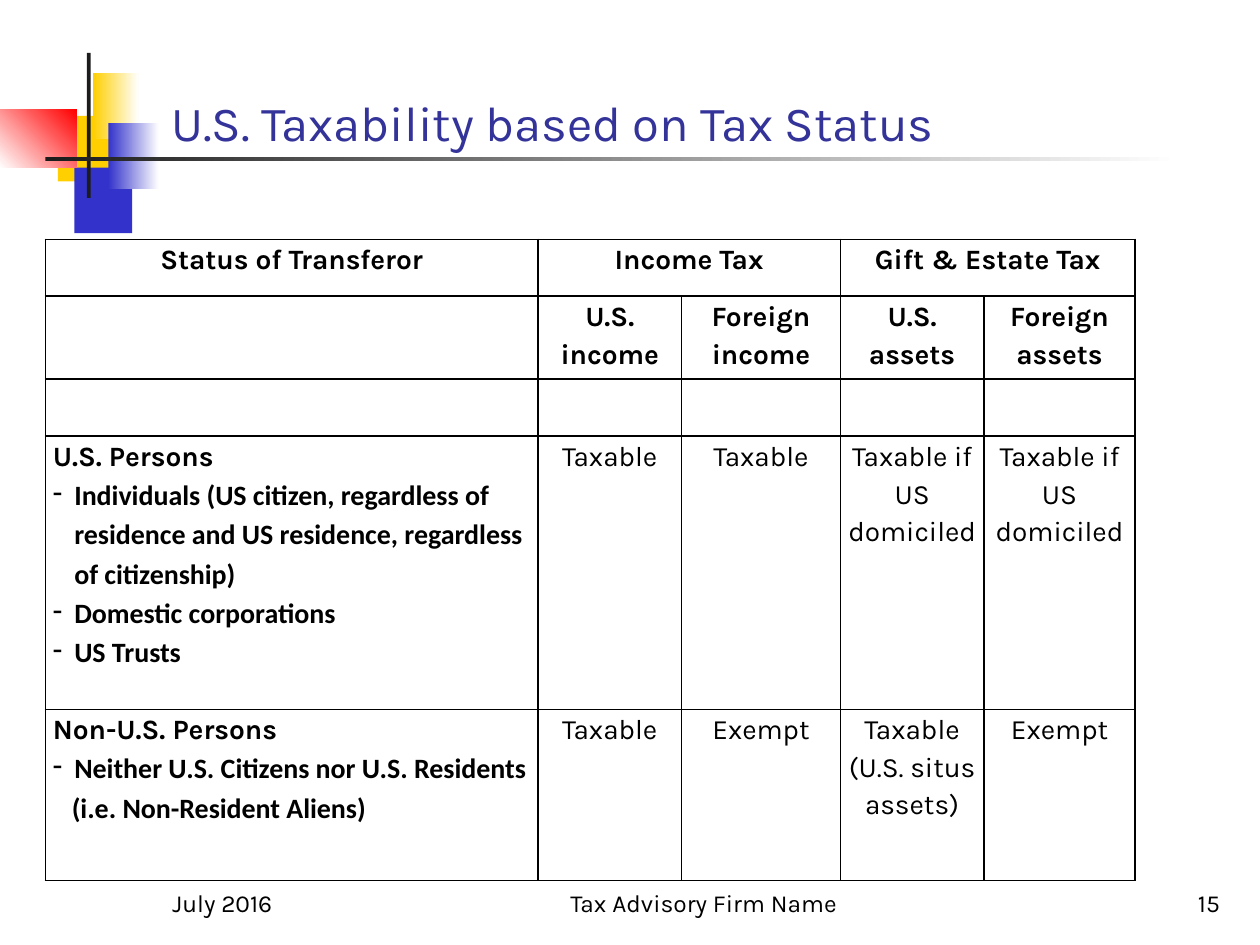
from typing import NamedTuple

from lxml import etree
from pptx import Presentation
from pptx.dml.color import RGBColor
from pptx.enum import shapes, text
from pptx.oxml import ns
from pptx.util import Inches, Pt

BLACK = RGBColor(0x00, 0x00, 0x00)
WHITE = RGBColor(0xFF, 0xFF, 0xFF)
YELLOW = RGBColor(0xFF, 0xCF, 0x01)
BLUE = RGBColor(0x33, 0x33, 0xCC)
RED = RGBColor(0xFF, 0x00, 0x00)
CHARCOAL = RGBColor(0x1C, 0x1C, 0x1C)
TITLE_BLUE = RGBColor(0x33, 0x33, 0x99)

LEFT, CENTER, RIGHT = text.PP_ALIGN.LEFT, text.PP_ALIGN.CENTER, text.PP_ALIGN.RIGHT


class Block(NamedTuple):
    box: tuple[float, float, float, float]
    colors: tuple[RGBColor, ...]
    angle: float = 0


class Label(NamedTuple):
    words: str
    box: tuple[float, float, float, float]
    align: text.PP_ALIGN = LEFT
    size: float = 14
    color: RGBColor = BLACK


class Line(NamedTuple):
    words: str
    align: text.PP_ALIGN = CENTER
    bold: bool = False
    font: str = "Karla"
    indent: float = 0
    bullet: bool = False


BLOCKS = [
    Block((0.46, 0.92, 0.48, 0.52), (YELLOW,)),
    Block((0.59, 1.33, 0.46, 0.52), (BLUE,)),
    Block((0.74, 0.58, 0.36, 0.52), (YELLOW, WHITE)),
    Block((0.86, 0.98, 0.4, 0.52), (BLUE, WHITE)),
    Block((0, 0.87, 0.61, 0.46), (WHITE, RED), 45),
    Block((0.69, 0.42, 0.03, 1.15), (CHARCOAL,)),
    Block((0.36, 1.25, 9, 0.03), (CHARCOAL, WHITE)),
]
LABELS = [
    Label("U.S. Taxability based on Tax Status", (1.26, 0.23, 8.52, 1.02), LEFT, 28, TITLE_BLUE),
    Label("July 2016", (1.27, 6.83, 2.08, 0.5)),
    Label("Tax Advisory Firm Name", (4, 6.83, 3.17, 0.5), CENTER),
    Label("15", (7.7, 6.83, 2.08, 0.5), RIGHT),
]


def head(words: str) -> list[Line]:
    return [Line(words, bold=True)]


def group(words: str) -> Line:
    return Line(words, LEFT, True)


def member(words: str, indent: float = 0.17, bullet: bool = True) -> Line:
    return Line(words, LEFT, True, "Calibri", indent, bullet)


def values(*words: str) -> list[list[Line]]:
    return [[Line(w)] for w in words]


COLUMNS = [3.91, 1.14, 1.26, 1.14, 1.2]
ROWS = [0.45, 0.66, 0.45, 2.17, 1.36]
HEADER_SPANS = [(1, 2), (3, 4)]
CELLS = [
    [head("Status of Transferor"), head("Income Tax"), [], head("Gift & Estate Tax"), []],
    [[], head("U.S. income"), head("Foreign income"), head("U.S. assets"), head("Foreign assets")],
    [[]] * len(COLUMNS),
    [
        [
            group("U.S. Persons"),
            member("Individuals (US citizen, regardless of residence and US residence, "
                   "regardless of citizenship)"),
            member("Domestic corporations"),
            member("US Trusts"),
        ],
        *values("Taxable", "Taxable", "Taxable if US domiciled", "Taxable if US domiciled"),
    ],
    [
        [
            group("Non-U.S. Persons"),
            member("Neither U.S. Citizens nor U.S. Residents"),
            member("(i.e. Non-Resident Aliens)", 0.15, False),
        ],
        *values("Taxable", "Exempt", "Taxable (U.S. situs assets)", "Exempt"),
    ],
]


def set_all(target, formats: dict) -> None:
    for name, value in formats.items():
        setattr(target, name, value)


def add_run(p, words: str, color: RGBColor, **font) -> None:
    r = p.add_run()
    r.text = words
    set_all(r.font, font)
    r.font.color.rgb = color


def add_block(s, block: Block) -> None:
    sp = s.shapes.add_shape(shapes.MSO_SHAPE.RECTANGLE, *map(Inches, block.box))
    sp.shadow.inherit = False
    sp.line.fill.background()
    if len(block.colors) == 1:
        sp.fill.solid()
        sp.fill.fore_color.rgb = block.colors[0]
        return
    sp.fill.gradient()
    sp.fill.gradient_angle = block.angle
    for position, (stop, color) in enumerate(zip(sp.fill.gradient_stops, block.colors)):
        stop.position = position
        stop.color.rgb = color


def add_label(s, label: Label) -> None:
    tf = s.shapes.add_textbox(*map(Inches, label.box)).text_frame
    set_all(tf, {"word_wrap": True, "vertical_anchor": text.MSO_ANCHOR.BOTTOM})
    p = tf.paragraphs[0]
    p.alignment = label.align
    add_run(p, label.words, label.color, size=Pt(label.size), name="Karla")


def add_borders(cell) -> None:
    """Draw all four sides; the lines must precede the fill in the cell properties."""
    tc_pr = cell._tc.get_or_add_tcPr()
    for i, side in enumerate(("lnL", "lnR", "lnT", "lnB")):
        ln = etree.Element(ns.qn(f"a:{side}"), w=str(Pt(1)))
        fill = etree.SubElement(ln, ns.qn("a:solidFill"))
        etree.SubElement(fill, ns.qn("a:srgbClr"), val=str(BLACK))
        tc_pr.insert(i, ln)


def write_line(p, line: Line) -> None:
    set_all(p, {"alignment": line.align, "line_spacing": 1.15})
    add_run(p, line.words, BLACK, size=Pt(16), name=line.font, bold=line.bold)
    p_pr = p._p.get_or_add_pPr()
    if line.indent:
        p_pr.set("marL", str(Inches(line.indent)))
    if line.bullet:
        p_pr.set("indent", str(-Inches(line.indent)))
        etree.SubElement(p_pr, ns.qn("a:buChar"), char="-")


def fill_cell(cell, lines: list[Line]) -> None:
    cell.fill.background()
    add_borders(cell)
    if not lines:
        return
    set_all(cell, {"margin_left": Inches(0.06), "margin_right": Inches(0.06),
                   "margin_top": 0, "margin_bottom": 0})
    tf = cell.text_frame
    for i, line in enumerate(lines):
        write_line(tf.add_paragraph() if i else tf.paragraphs[0], line)


def add_tax_table(s) -> None:
    box = map(Inches, (0.36, 1.9, sum(COLUMNS), sum(ROWS)))
    table = s.shapes.add_table(len(ROWS), len(COLUMNS), *box).table
    set_all(table, {"first_row": False, "horz_banding": False})
    for column, width in zip(table.columns, COLUMNS):
        column.width = Inches(width)
    for row, height, contents in zip(table.rows, ROWS, CELLS):
        row.height = Inches(height)
        for cell, lines in zip(row.cells, contents):
            fill_cell(cell, lines)
    for first, last in HEADER_SPANS:
        table.cell(0, first).merge(table.cell(0, last))


def main() -> None:
    prs = Presentation()
    set_all(prs, {"slide_width": Inches(10), "slide_height": Inches(7.5)})
    s = prs.slides.add_slide(prs.slide_layouts[6])
    for block in BLOCKS:
        add_block(s, block)
    for label in LABELS:
        add_label(s, label)
    add_tax_table(s)
    prs.save("out.pptx")


if __name__ == "__main__":
    main()
